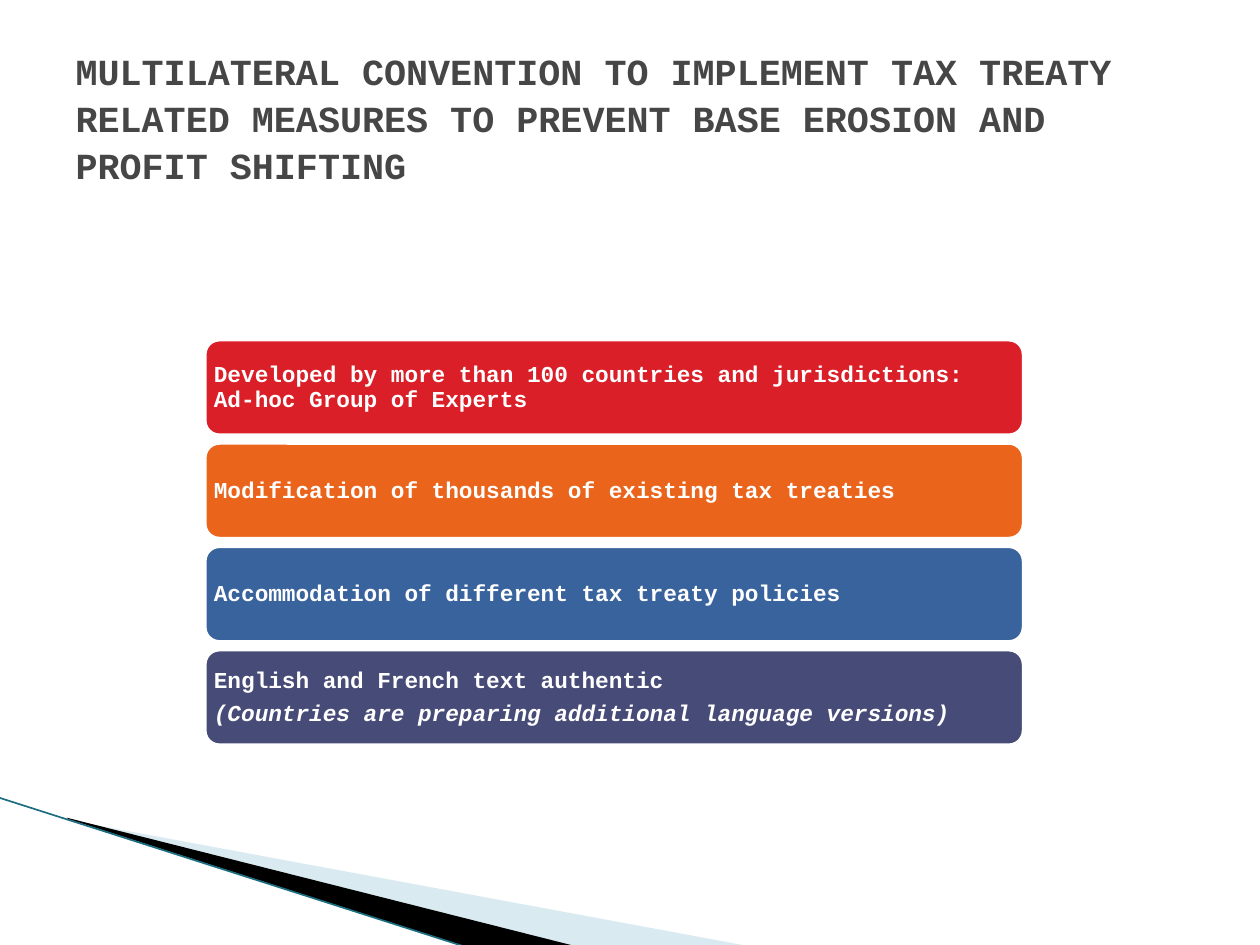
from dataclasses import dataclass

from pptx import Presentation, util as u
from pptx.dml.color import RGBColor
from pptx.enum import shapes, text
from pptx.oxml.xmlchemy import OxmlElement


@dataclass(frozen=True)
class Theme:
    font: str = "Courier New"
    head: str = "464646"
    white: str = "FFFFFF"
    pale: str = "A0CBDC"
    black: str = "000000"
    teal: str = "1B6E80"
    head_size: float = 21
    bar_size: float = 13


@dataclass(frozen=True)
class Bar:
    color: str
    lines: tuple[str, ...]


@dataclass(frozen=True)
class Wedge:
    color: str
    points: tuple[tuple[float, float], ...]
    alpha: int = 100


THEME = Theme()
WIDE, HIGH = 10, 7.5
LEFT, TOP, BAR_W, BAR_H, PITCH = 1.61, 2.68, 6.53, 0.79, 0.82

TITLE = ("MULTILATERAL CONVENTION TO IMPLEMENT TAX TREATY RELATED MEASURES "
         "TO PREVENT BASE EROSION AND PROFIT SHIFTING")
BARS = (
    Bar("DA1F28", ("Developed by more than 100 countries and jurisdictions: "
                   "Ad-hoc Group of Experts",)),
    Bar("EB641B", ("Modification of thousands of existing tax treaties",)),
    Bar("39639D", ("Accommodation of different tax treaty policies",)),
    Bar("474B78", ("English and French text authentic",
                   "(Countries are preparing additional language versions)")),
)
WEDGES = (
    Wedge(THEME.pale, ((0.55, 6.51), (5.95, 7.51), (4.56, 7.51), (0.55, 6.5)), 40),
    Wedge(THEME.black, ((0.53, 6.49), (4.57, 7.51), (3.72, 7.52), (0.54, 6.5))),
)


def style(item, **values) -> None:
    for name, value in values.items():
        setattr(item, name, value)


def ink(font, size: float, color: str, italic: bool = False) -> None:
    style(font, name=THEME.font, size=u.Pt(size), bold=True, italic=italic)
    font.color.rgb = RGBColor.from_string(color)


def paint(shape, color: str) -> None:
    shape.shadow.inherit = False
    shape.fill.solid()
    shape.fill.fore_color.rgb = RGBColor.from_string(color)


def draw_wedge(slide, wedge: Wedge) -> None:
    points = [(u.Inches(x), u.Inches(y)) for x, y in wedge.points]
    pen = slide.shapes.build_freeform(*points[0])
    pen.add_line_segments(points[1:], close=True)
    shape = pen.convert_to_shape()
    paint(shape, wedge.color)
    shape.line.fill.background()
    if wedge.alpha < 100:
        alpha = OxmlElement("a:alpha")
        alpha.set("val", str(wedge.alpha * 1000))
        shape.fill._xPr.find(".//{*}srgbClr").append(alpha)


def draw_edge(slide) -> None:
    """Draw the thin line along the lower side of the wedges."""
    ends = [u.Inches(n) for n in (-0.01, 6.33, 3.71, 7.52)]
    edge = slide.shapes.add_connector(shapes.MSO_CONNECTOR.STRAIGHT, *ends)
    edge.line.color.rgb = RGBColor.from_string(THEME.teal)
    edge.line.width = u.Pt(0.95)
    edge._element.spPr.append(OxmlElement("a:effectLst"))


def draw_title(slide) -> None:
    title = slide.shapes.title
    style(title, left=u.Inches(0.05 * WIDE), top=u.Inches(0.04 * HIGH),
          width=u.Inches(0.9 * WIDE), height=u.Inches(1.25))
    frame = title.text_frame
    frame.text = TITLE
    style(frame, word_wrap=True, auto_size=text.MSO_AUTO_SIZE.NONE,
          vertical_anchor=text.MSO_ANCHOR.MIDDLE)
    para = frame.paragraphs[0]
    style(para, alignment=text.PP_ALIGN.LEFT, line_spacing=1.07)
    ink(para.runs[0].font, THEME.head_size, THEME.head)


def draw_bar(slide, row: int, bar: Bar) -> None:
    box = [u.Inches(n) for n in (LEFT, TOP + row * PITCH, BAR_W, BAR_H)]
    shape = slide.shapes.add_shape(shapes.MSO_SHAPE.ROUNDED_RECTANGLE, *box)
    paint(shape, bar.color)
    shape.line.color.rgb = RGBColor.from_string(THEME.white)
    shape.line.width = u.Pt(4.33)
    frame = shape.text_frame
    pad = u.Inches(0.05)
    style(frame, word_wrap=True, vertical_anchor=text.MSO_ANCHOR.MIDDLE,
          margin_left=pad, margin_right=pad, margin_top=pad, margin_bottom=pad)
    for i, line in enumerate(bar.lines):
        para = frame.add_paragraph() if i else frame.paragraphs[0]
        style(para, alignment=text.PP_ALIGN.LEFT, line_spacing=0.9,
              space_after=u.Pt(5))
        run = para.add_run()
        run.text = line
        ink(run.font, THEME.bar_size, THEME.white, italic=i > 0)


def main() -> None:
    deck = Presentation()
    style(deck, slide_width=u.Inches(WIDE), slide_height=u.Inches(HIGH))
    slide = deck.slides.add_slide(deck.slide_layouts[5])
    for wedge in WEDGES:
        draw_wedge(slide, wedge)
    draw_edge(slide)
    draw_title(slide)
    for row, bar in enumerate(BARS):
        draw_bar(slide, row, bar)
    deck.save("out.pptx")


if __name__ == "__main__":
    main()
